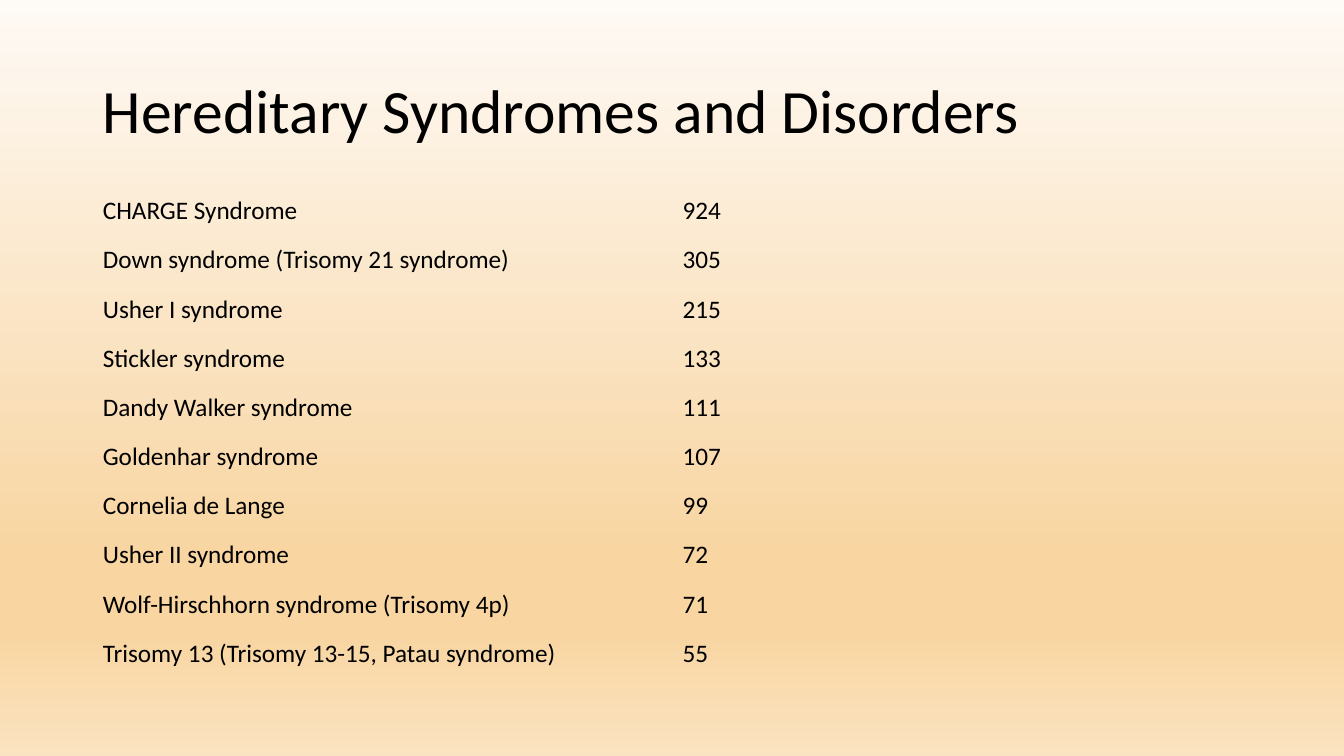
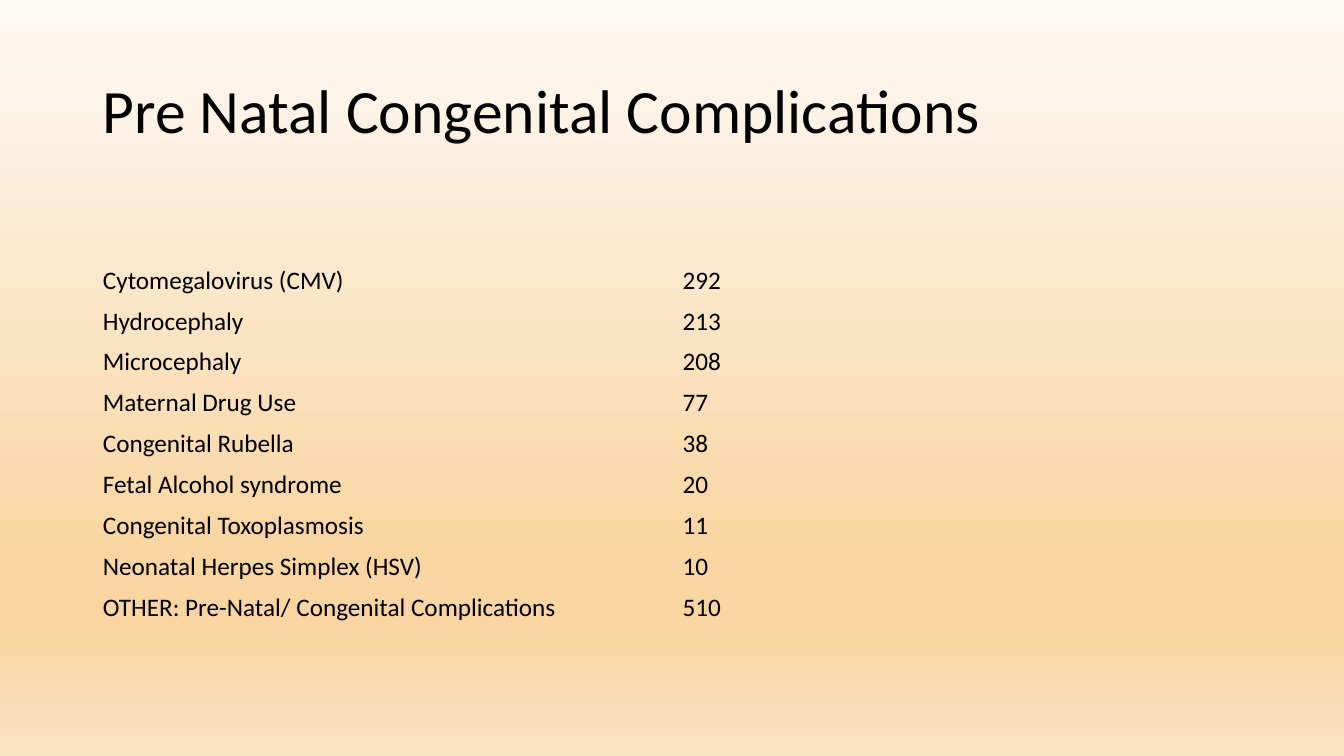
from lxml.etree import SubElement
from pptx import Presentation
from pptx.dml.color import RGBColor as RGB
from pptx.enum.text import MSO_ANCHOR as Anchor, PP_ALIGN as Align
from pptx.oxml.ns import qn
from pptx.util import Inches, Pt

COLORS = {"text": "000000", "cream": "FEFAF5", "amber": "F8D5A1", "sand": "FAE3C0"}
STOPS = [(0, "cream"), (74, "amber"), (83, "amber"), (100, "sand")]
FONT = "Calibri"
PLAIN = "{2D5ABB26-0587-4C30-8999-92F81FD0307C}"  # No Style, No Grid
LEFT, WIDTH = Inches(0.92), Inches(11.5)

# Title, table top, row height, rows
SLIDES = [
    ("Hereditary Syndromes and Disorders", 1.85, 0.488, [
        ("CHARGE Syndrome", 924),
        ("Down syndrome (Trisomy 21 syndrome)", 305),
        ("Usher I syndrome", 215),
        ("Stickler syndrome", 133),
        ("Dandy Walker syndrome", 111),
        ("Goldenhar syndrome", 107),
        ("Cornelia de Lange", 99),
        ("Usher II syndrome", 72),
        ("Wolf-Hirschhorn syndrome (Trisomy 4p)", 71),
        ("Trisomy 13 (Trisomy 13-15, Patau syndrome)", 55),
    ]),
    ("Pre Natal Congenital Complications", 2.58, 0.4, [
        ("Cytomegalovirus (CMV)", 292),
        ("Hydrocephaly", 213),
        ("Microcephaly", 208),
        ("Maternal Drug Use", 77),
        ("Congenital Rubella", 38),
        ("Fetal Alcohol syndrome", 20),
        ("Congenital Toxoplasmosis", 11),
        ("Neonatal Herpes Simplex (HSV)", 10),
        ("OTHER: Pre-Natal/ Congenital Complications", 510),
    ]),
]


def write(frame, text, size):
    """Add one left-aligned run to the first paragraph and return the paragraph."""
    para = frame.paragraphs[0]
    para.alignment = Align.LEFT
    run = para.add_run()
    run.text = text
    run.font.name = FONT
    run.font.size = Pt(size)
    run.font.bold = False
    run.font.color.rgb = RGB.from_string(COLORS["text"])
    return para


prs = Presentation()
prs.slide_width, prs.slide_height = Inches(13.33), Inches(7.5)

# Shared background
master = prs.slide_master
fill = master.background.fill
fill.gradient()
fill.gradient_angle = 270
stops = master.element.find(".//" + qn("a:gsLst"))
for old in list(stops):
    stops.remove(old)
for pos, name in STOPS:
    stop = SubElement(stops, qn("a:gs"), pos=str(pos * 1000))
    SubElement(stop, qn("a:srgbClr"), val=COLORS[name])

# Shared title place
layout = prs.slide_layouts.get_by_name("Title Only")
head = layout.placeholders[0]
head.left, head.top = LEFT, Inches(0.4)
head.width, head.height = WIDTH, Inches(1.45)
head.text_frame.vertical_anchor = Anchor.MIDDLE

for title, top, height, rows in SLIDES:
    slide = prs.slides.add_slide(layout)
    write(slide.shapes.title.text_frame, title, 44).line_spacing = 0.9

    frame = slide.shapes.add_table(len(rows), 2, LEFT, Inches(top),
                                   WIDTH, Inches(height * len(rows)))
    table = frame.table
    table.first_row = table.horz_banding = False
    table._tbl.tblPr.find(qn("a:tableStyleId")).text = PLAIN
    for r, row in enumerate(rows):
        table.rows[r].height = Inches(height)
        for c, value in enumerate(row):
            cell = table.cell(r, c)
            cell.fill.background()
            cell.vertical_anchor = Anchor.MIDDLE
            write(cell.text_frame, str(value), 18)

prs.save("out.pptx")
